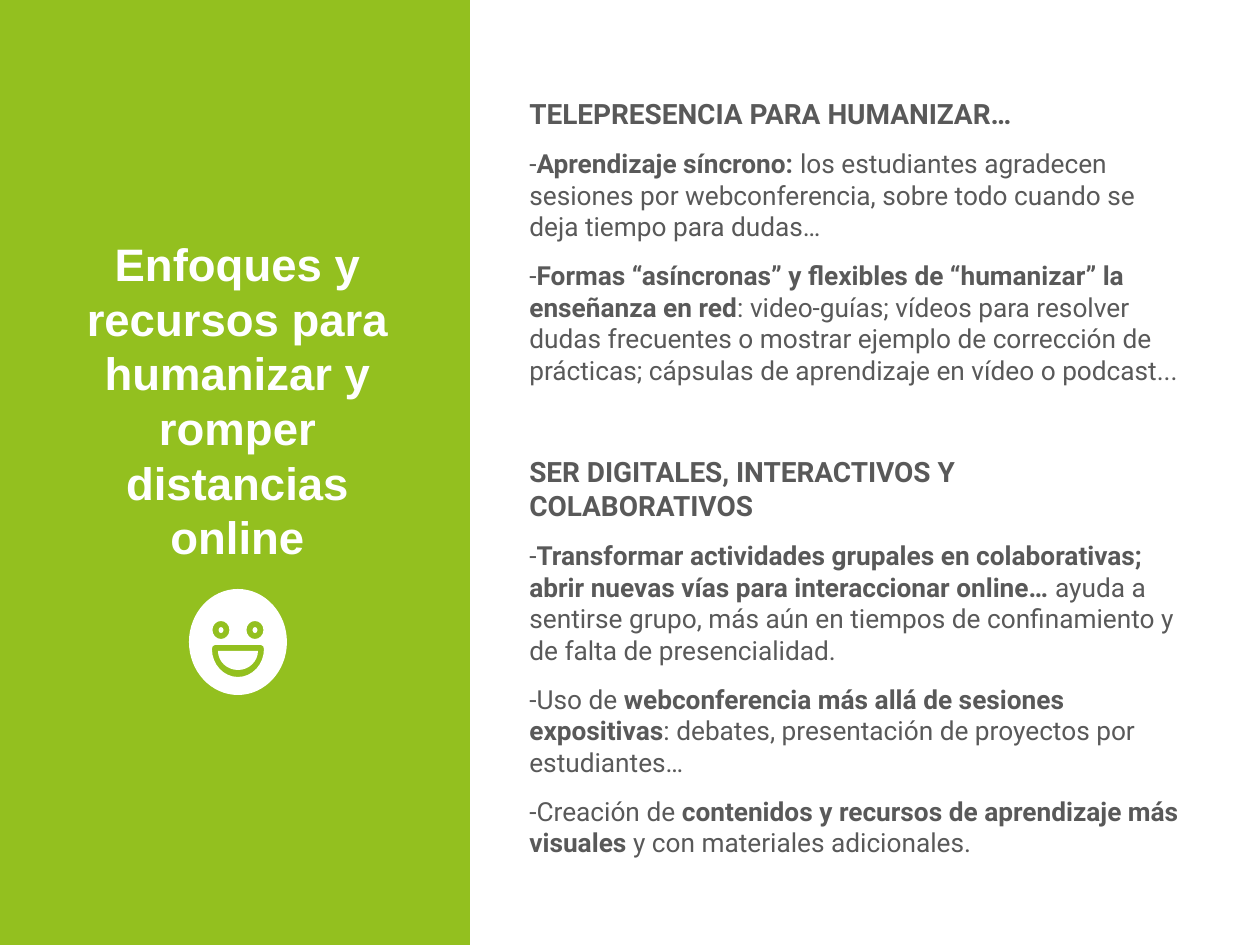
import lxml.etree
import pptx
import pptx.dml.color
import pptx.enum.shapes
import pptx.enum.text
import pptx.oxml.ns
import pptx.util

# Content: each paragraph is (size, space before, [(text, bold), ...])
TITLE = "Enfoques y recursos para humanizar y romper distancias online"
BODY = [
    (16, 0, [("TELEPRESENCIA PARA HUMANIZAR…", True)]),
    (15, 10, [
        ("-", False), ("Aprendizaje síncrono: ", True),
        ("los estudiantes agradecen sesiones por webconferencia, sobre todo "
         "cuando se deja tiempo para dudas…", False)]),
    (15, 10, [
        ("-", False),
        ("Formas “asíncronas” y flexibles de “humanizar” la enseñanza en red", True),
        (": video-guías; vídeos para resolver dudas frecuentes o mostrar ejemplo "
         "de corrección de prácticas; cápsulas de aprendizaje en vídeo o podcast...", False)]),
    (16, 39.5, [("SER DIGITALES, INTERACTIVOS Y COLABORATIVOS", True)]),
    (15, 10, [
        ("-", False),
        ("Transformar actividades grupales en colaborativas; abrir nuevas vías "
         "para interaccionar online…", True),
        (" ayuda a sentirse grupo, más aún en tiempos de confinamiento y de falta "
         "de presencialidad.", False)]),
    (15, 10, [
        ("-Uso de ", False), ("webconferencia más allá de sesiones expositivas", True),
        (": debates, presentación de proyectos por estudiantes…", False)]),
    (15, 10, [
        ("-Creación de ", False),
        ("contenidos y recursos de aprendizaje más visuales", True),
        (" y con materiales adicionales.", False)]),
]
GREEN, WHITE, GREY = "93C01F", "FFFFFF", "595959"
PX = 914400 / 126
KAPPA = 0.55  # Bezier handle length for a quarter ellipse


def px(value):
    return pptx.util.Emu(round(value * PX))


def color(value):
    return pptx.dml.color.RGBColor.from_string(value)


def paint(shape, fill):
    shape.shadow.inherit = False
    shape.fill.solid()
    shape.fill.fore_color.rgb = color(fill)
    shape.line.fill.background()


def add_text_frame(box, inset, anchor):
    frame = slide.shapes.add_textbox(*map(px, box)).text_frame
    frame.word_wrap = True
    frame.vertical_anchor = anchor
    frame.margin_top = frame.margin_bottom = px(inset)
    return frame


def add_run(paragraph, text, font, size, fill, bold):
    run = paragraph.add_run()
    run.text = text
    run.font.name = font
    run.font.size = pptx.util.Pt(size)
    run.font.bold = bold
    run.font.color.rgb = color(fill)


def ellipse(x, y, radius_x, radius_y, quarters=4):
    """Start point, then three Bezier points per quarter, clockwise from the right."""
    points = [(x + radius_x, y)]
    cosine, sine = 1, 0
    for _ in range(quarters):
        next_cosine, next_sine = -sine, cosine
        for across, down in (
                (cosine + KAPPA * next_cosine, sine + KAPPA * next_sine),
                (next_cosine + KAPPA * cosine, next_sine + KAPPA * sine),
                (next_cosine, next_sine)):
            points.append((x + radius_x * across, y + radius_y * down))
        cosine, sine = next_cosine, next_sine
    return points


def add_outline(group, contours):
    """One white curved shape; inner contours become holes."""
    points = [[(px(x), px(y)) for x, y in contour] for contour in contours]
    builder = group.shapes.build_freeform(*points[0][0], scale=1.0)
    builder.add_line_segments(points[0][1:], close=True)
    for contour in points[1:]:
        builder.move_to(*contour[0])
        builder.add_line_segments(contour[1:], close=True)
    shape = builder.convert_to_shape()
    paint(shape, WHITE)
    # Join each three line steps into one Bezier step
    steps = list(shape.element.iter(pptx.oxml.ns.qn("a:lnTo")))
    for first in range(0, len(steps), 3):
        curve = lxml.etree.Element(pptx.oxml.ns.qn("a:cubicBezTo"))
        steps[first].addprevious(curve)
        for step in steps[first:first + 3]:
            curve.append(step[0])
            step.getparent().remove(step)


presentation = pptx.Presentation()
presentation.slide_width, presentation.slide_height = px(1260), px(945)
slide = presentation.slides.add_slide(presentation.slide_layouts[6])

# Green side panel
panel = slide.shapes.add_shape(
    pptx.enum.shapes.MSO_SHAPE.RECTANGLE, px(0), px(0), px(470), px(945))
paint(panel, GREEN)

# Title
frame = add_text_frame((56, 228, 363, 344), 6, pptx.enum.text.MSO_ANCHOR.MIDDLE)
paragraph = frame.paragraphs[0]
paragraph.alignment = pptx.enum.text.PP_ALIGN.CENTER
add_run(paragraph, TITLE, "Arial", 26, WHITE, True)

# Body text
frame = add_text_frame((517, 84, 678, 786), 12.6, pptx.enum.text.MSO_ANCHOR.TOP)
for index, (size, before, runs) in enumerate(BODY):
    paragraph = frame.add_paragraph() if index else frame.paragraphs[0]
    paragraph.space_before = pptx.util.Pt(before)
    for text, bold in runs:
        add_run(paragraph, text, "Roboto", size, GREY, bold)

# Smiling face: pupils, mouth, and a head with holes for eyes and mouth
CENTER_X, EYE_Y, EYE_OFFSET = 238, 630, 17
left_eye, right_eye = CENTER_X - EYE_OFFSET, CENTER_X + EYE_OFFSET
mouth_hole = ([(261, 645), (263, 645), (264, 647)]
              + ellipse(CENTER_X, 649, 26, 28, 2)
              + [(212, 647), (213, 645), (215, 645)])
face = slide.shapes.add_group_shape()
add_outline(face, [ellipse(left_eye, EYE_Y, 2.5, 3)])
add_outline(face, [ellipse(CENTER_X, 651, 20, 19, 2)])
add_outline(face, [ellipse(left_eye, EYE_Y, 8.5, 9), ellipse(right_eye, EYE_Y, 8.5, 9),
                   mouth_hole, ellipse(CENTER_X, 642, 49, 53)])
add_outline(face, [ellipse(right_eye, EYE_Y, 2.5, 3)])

presentation.save("out.pptx")
